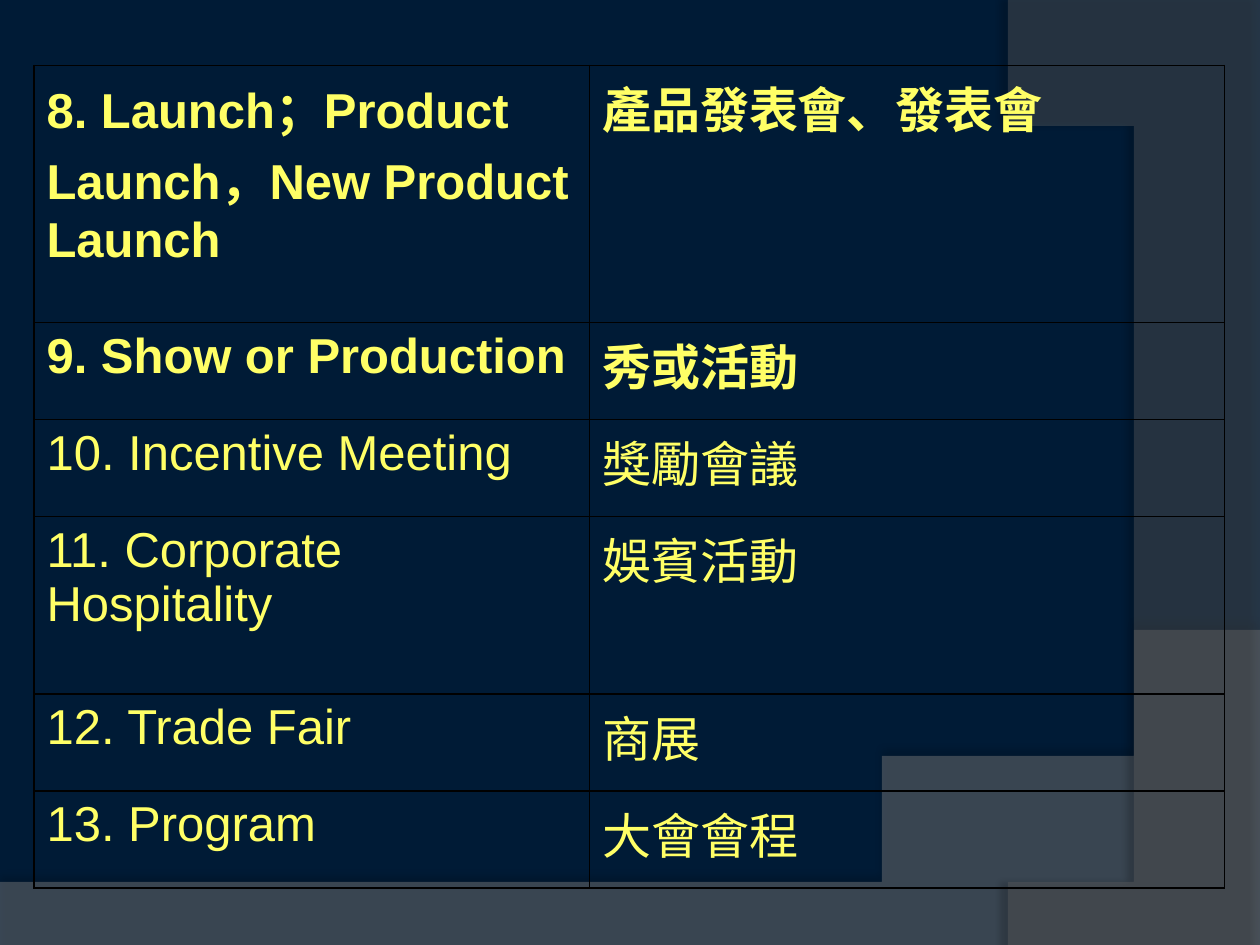
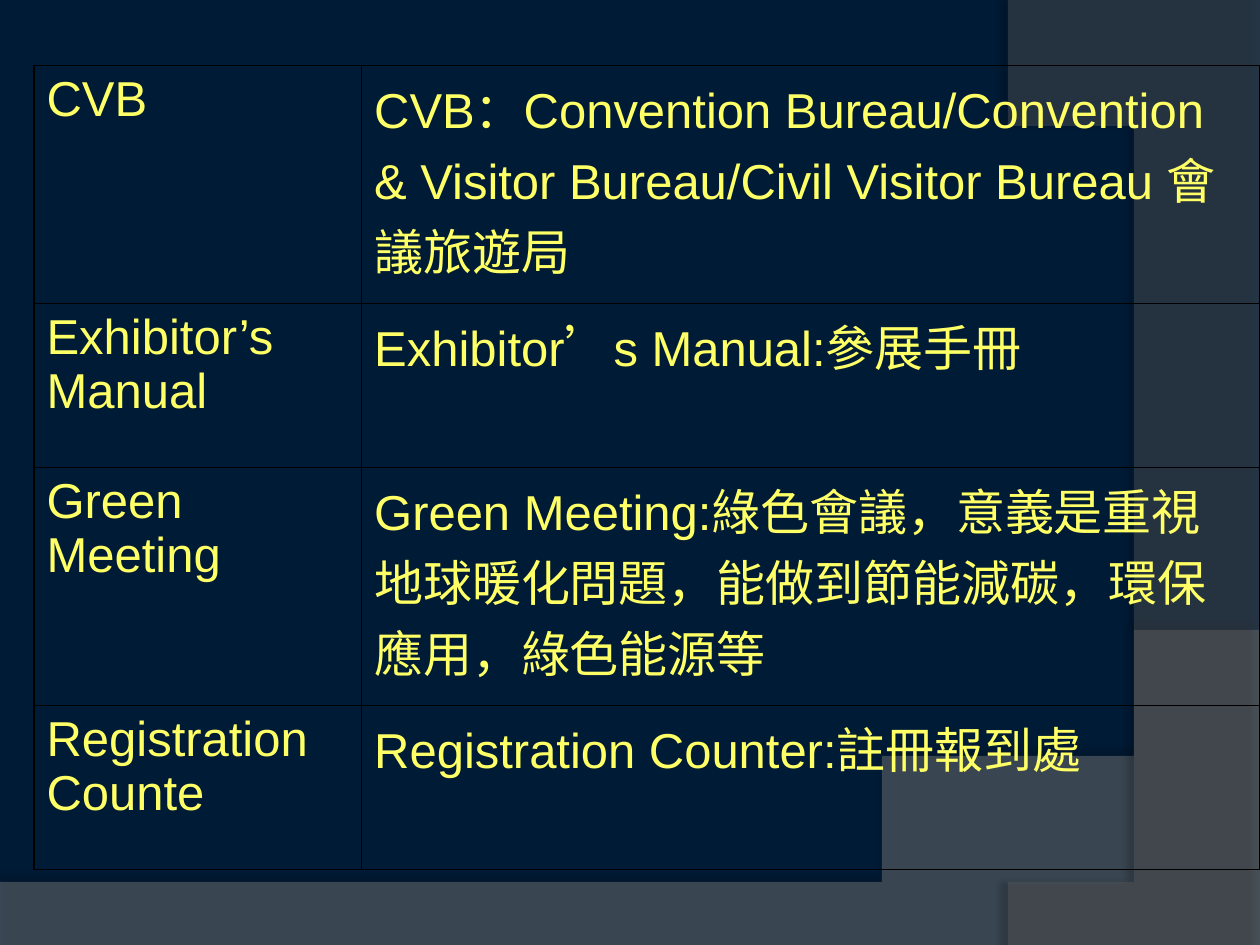
import pptx
import pptx.dml.color
import pptx.oxml
import pptx.oxml.ns
import pptx.util

Inches = pptx.util.Inches
Pt = pptx.util.Pt
COLORS = {"back": "001B36", "wave": "7F7F7F", "arc": "5E5E5E",
          "text": "FFFF66", "line": "000000"}
FONT = "Arial"
SIZE = 28
STEPS = 40
SPACE = pptx.oxml.ns.nsdecls("a")

EVENTS = [
    ("8. Launch；Product Launch，New Product Launch", "產品發表會、發表會"),
    ("9. Show or Production", "秀或活動"),
    ("10. Incentive Meeting", "獎勵會議"),
    ("11. Corporate Hospitality", "娛賓活動"),
    ("12. Trade Fair", "商展"),
    ("13. Program", "大會會程"),
]
TERMS = [
    ("CVB", "CVB：Convention Bureau/Convention & Visitor Bureau/Civil Visitor Bureau 會議旅遊局"),
    ("Exhibitor’s Manual", "Exhibitor’s Manual:參展手冊"),
    ("Green Meeting", "Green Meeting:綠色會議，意義是重視地球暖化問題，能做到節能減碳，環保應用，綠色能源等"),
    ("Registration Counte", "Registration Counter:註冊報到處"),
]


def color(name):
    return pptx.dml.color.RGBColor.from_string(COLORS[name])


def curve(a, b, c, d):
    points = []
    for step in range(STEPS + 1):
        t = step / STEPS
        s = 1 - t
        points.append(tuple(s**3 * p + 3 * s * s * t * q + 3 * s * t * t * r + t**3 * e
                            for p, q, r, e in zip(a, b, c, d)))
    return points


def draw_band(slide, box, points, name, alpha, shade, blur, angle):
    left, top = box
    points = [(left + x, top + y) for x, y in points]
    maker = slide.shapes.build_freeform(*points[0], scale=Inches(1))
    maker.add_line_segments(points[1:], close=True)
    band = maker.convert_to_shape()
    band.line.fill.background()
    band.fill.solid()
    band.fill.fore_color.rgb = color(name)
    tint = band.fill._xPr.find(".//" + pptx.oxml.ns.qn("a:srgbClr"))
    tint.append(pptx.oxml.parse_xml(f'<a:alpha {SPACE} val="{alpha * 1000}"/>'))
    band.shadow.inherit = False
    effects = band._element.spPr.find(pptx.oxml.ns.qn("a:effectLst"))
    effects.append(pptx.oxml.parse_xml(
        f'<a:outerShdw {SPACE} blurRad="{Pt(blur)}" dist="{Pt(4 if angle == 180 else 3.5)}" '
        f'dir="{angle * 60000}" algn="ctr" rotWithShape="0">'
        f'<a:srgbClr val="{COLORS["line"]}"><a:alpha val="{shade * 1000}"/></a:srgbClr>'
        '</a:outerShdw>'))


def add_page(deck):
    slide = deck.slides.add_slide(deck.slide_layouts[6])
    slide.background.fill.solid()
    slide.background.fill.fore_color.rgb = color("back")
    wave = [(0, 2.3), (10, 2.3)] + curve((10, 0), (5.59, 2.09), (3.91, 1.99), (0, 1.85))
    arc = [(2, 0.02), (2, 7.5)] + curve((0.21, 7.5), (1.35, 6.19), (2.18, 3), (0, 0))
    draw_band(slide, (0, 5.2), wave, "wave", 45, 35, 4, 270)
    draw_band(slide, (8, 0), arc, "arc", 40, 45, 4, 180)
    return slide


def style_cell(cell, text, bold):
    cell.text_frame.text = text
    for run in cell.text_frame.paragraphs[0].runs:
        run.font.name = FONT
        run.font.size = Pt(SIZE)
        run.font.bold = bold
        run.font.color.rgb = color("text")
    props = cell._tc.get_or_add_tcPr()
    for side in "LRTB":
        props.append(pptx.oxml.parse_xml(
            f'<a:ln{side} {SPACE} w="{Pt(1)}"><a:solidFill>'
            f'<a:srgbClr val="{COLORS["line"]}"/></a:solidFill></a:ln{side}>'))
    cell.fill.background()


def add_list(slide, box, widths, heights, rows, strong=0):
    left, top = box
    frame = slide.shapes.add_table(len(rows), len(widths), Inches(left), Inches(top),
                                   Inches(sum(widths)), Inches(sum(heights)))
    table = frame.table
    table.first_row = False
    table.horz_banding = False
    for column, width in zip(table.columns, widths):
        column.width = Inches(width)
    for index, (row, height, texts) in enumerate(zip(table.rows, heights, rows)):
        row.height = Inches(height)
        for cell, text in zip(row.cells, texts):
            style_cell(cell, text, index < strong)


def main():
    deck = pptx.Presentation()
    deck.slide_width = Inches(10)
    deck.slide_height = Inches(7.5)
    corner = (0.27, 0.52)
    add_list(add_page(deck), corner, (4.41, 5.04),
             (2.04, 0.77, 0.77, 1.41, 0.77, 0.77), EVENTS, strong=2)
    add_list(add_page(deck), corner, (2.6, 7.13), (1.89, 1.3) * 2, TERMS)
    deck.save("out.pptx")


if __name__ == "__main__":
    main()
